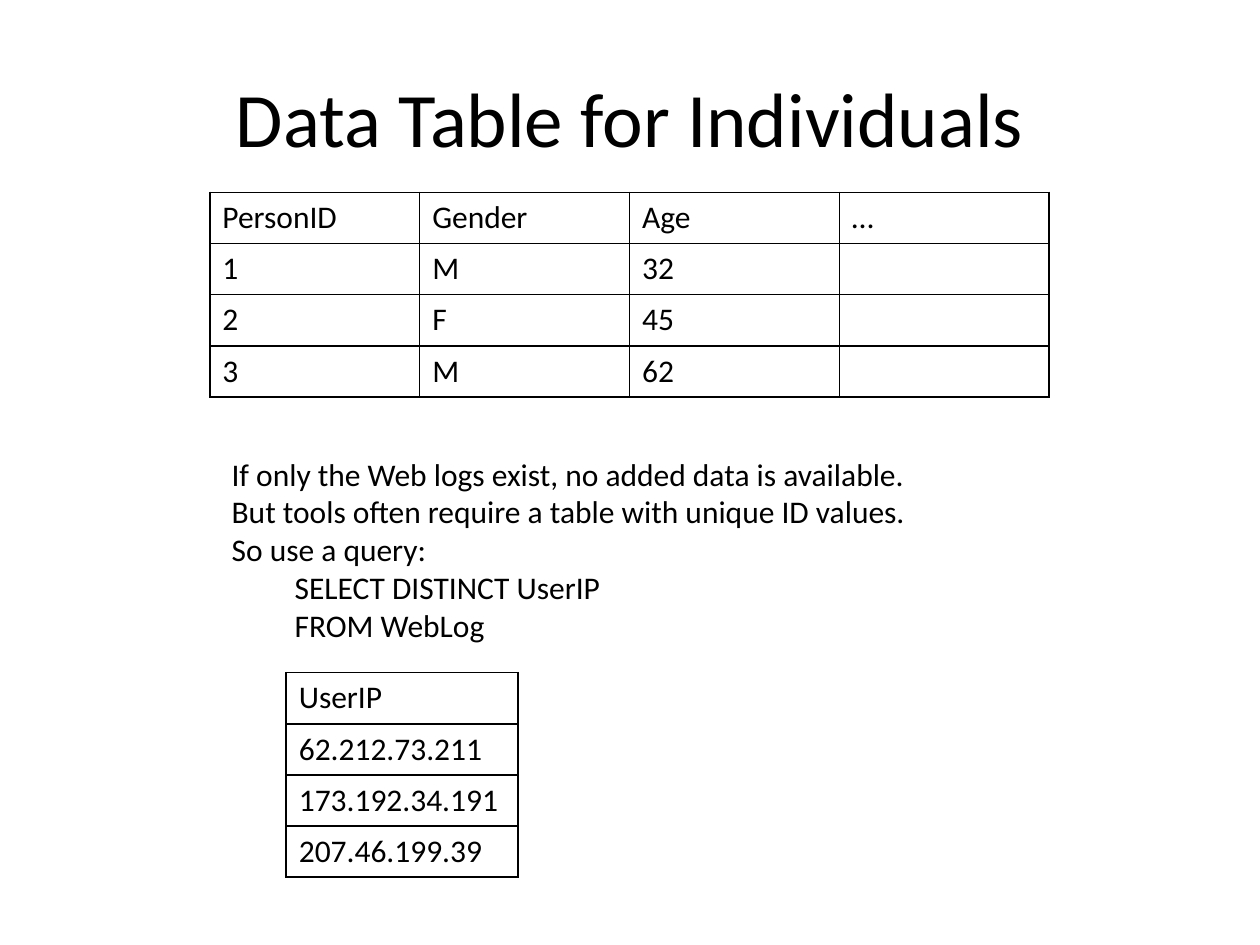
"""Build the slide on data tables for individuals."""
from lxml import etree
from pptx import Presentation
from pptx.dml.color import RGBColor
from pptx.enum import text
from pptx.oxml import ns
from pptx.util import Cm, Pt

FONT = "Calibri"
BLACK = "000000"
BORDER_WIDTH = Pt(1)
ROW_HEIGHT = 1.03

TITLE = "Data Table for Individuals"
PERSONS = [
    ["PersonID", "Gender", "Age", "…"],
    ["1", "M", "32", ""],
    ["2", "F", "45", ""],
    ["3", "M", "62", ""],
]
EXPLANATION = [
    "If only the Web logs exist, no added data is available.",
    "But tools often require a table with unique ID values.",
    "So use a query:",
    "\tSELECT DISTINCT UserIP",
    "\tFROM WebLog",
]
USERS = [["UserIP"], ["62.212.73.211"], ["173.192.34.191"], ["207.46.199.39"]]


def color(value):
    return RGBColor.from_string(value)


def write(frame, lines, size=18, align=text.PP_ALIGN.LEFT):
    frame.text = "\n".join(lines)
    for paragraph in frame.paragraphs:
        paragraph.alignment = align
        paragraph.font.name = FONT
        paragraph.font.size = Pt(size)
        paragraph.font.color.rgb = color(BLACK)


def add_text(slide, box, lines, wrap=True, anchor=text.MSO_ANCHOR.TOP, **style):
    frame = slide.shapes.add_textbox(*map(Cm, box)).text_frame
    frame.word_wrap = wrap
    frame.vertical_anchor = anchor
    write(frame, lines, **style)


def add_borders(cell):
    properties = cell._tc.get_or_add_tcPr()
    for side in ("a:lnL", "a:lnR", "a:lnT", "a:lnB"):
        line = etree.SubElement(properties, ns.qn(side), w=str(BORDER_WIDTH))
        fill = etree.SubElement(line, ns.qn("a:solidFill"))
        etree.SubElement(fill, ns.qn("a:srgbClr"), val=BLACK)


def add_table(slide, left, top, column_width, rows):
    columns = len(rows[0])
    size = (column_width * columns, ROW_HEIGHT * len(rows))
    shape = slide.shapes.add_table(len(rows), columns, *map(Cm, (left, top, *size)))
    table = shape.table
    table.first_row = table.horz_banding = False
    for row_index, row in enumerate(rows):
        for column_index, value in enumerate(row):
            cell = table.cell(row_index, column_index)
            write(cell.text_frame, [value])
            add_borders(cell)
            cell.fill.background()


def main():
    presentation = Presentation()
    presentation.slide_width, presentation.slide_height = Cm(25.4), Cm(19.05)
    slide = presentation.slides.add_slide(presentation.slide_layouts[6])
    add_text(slide, (1.27, 0.76, 22.86, 3.18), [TITLE], size=44,
             align=text.PP_ALIGN.CENTER, anchor=text.MSO_ANCHOR.MIDDLE)
    add_table(slide, 4.23, 3.88, 4.23, PERSONS)
    add_text(slide, (4.42, 9.04, 14.27, 4.11), EXPLANATION, wrap=False)
    add_table(slide, 5.77, 13.56, 4.67, USERS)
    presentation.save("out.pptx")


if __name__ == "__main__":
    main()
